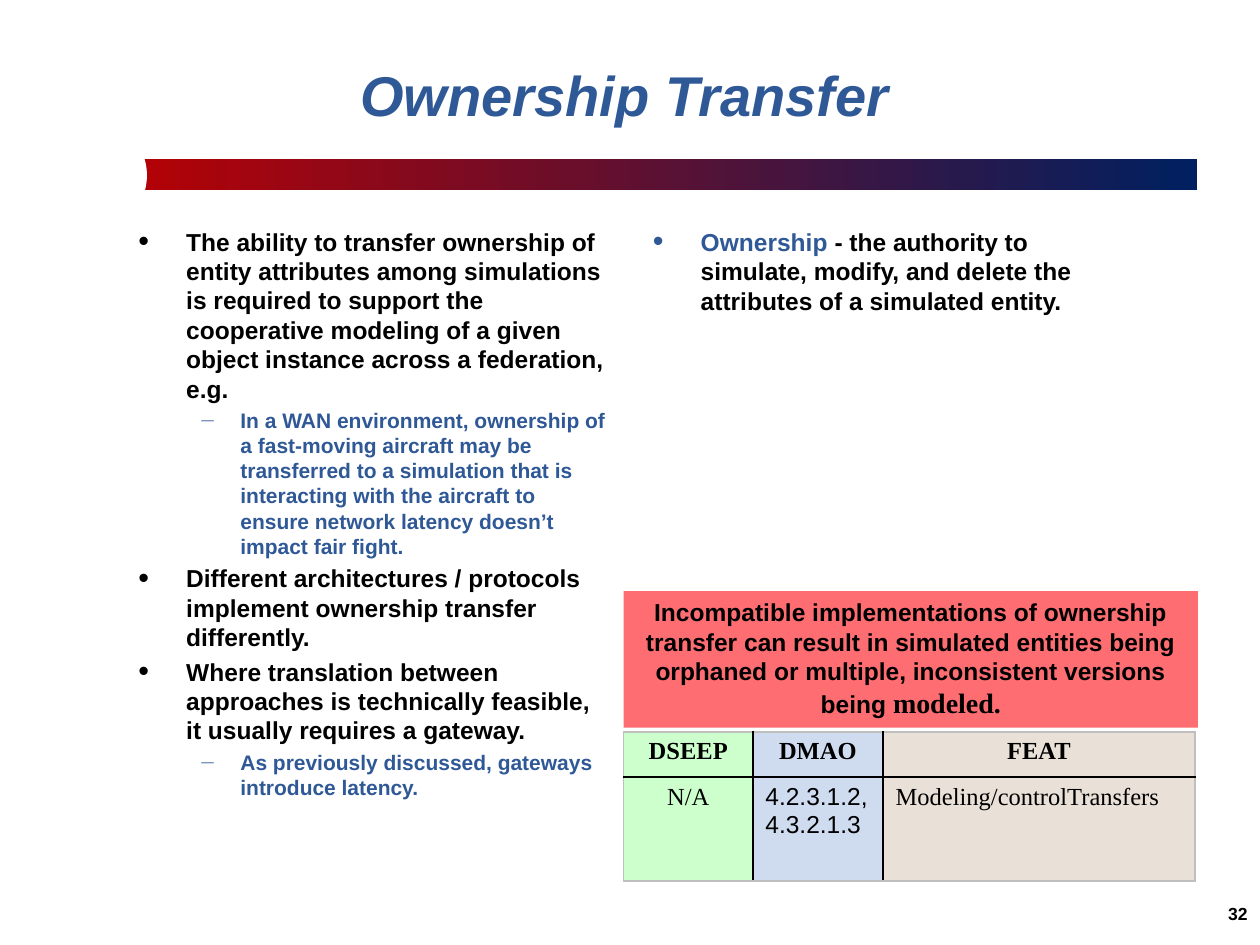
import pptx
import pptx.util
import pptx.dml.color
import pptx.enum.shapes
import pptx.enum.text
import pptx.oxml
import pptx.oxml.ns

COLORS = {"black": "000000", "blue": "2F5897", "white": "FFFFFF", "red": "C00000",
          "navy": "002060", "warning": "FD6D71", "green": "CCFFCC",
          "pale blue": "CFDCF0", "sand": "E9E0D7", "edge": "BFBFBF"}
RGB = {name: pptx.dml.color.RGBColor.from_string(code) for name, code in COLORS.items()}
ALIGN = pptx.enum.text.PP_ALIGN
ANCHOR = pptx.enum.text.MSO_ANCHOR
SHAPE = pptx.enum.shapes.MSO_SHAPE

deck = pptx.Presentation()
deck.slide_width = pptx.util.Inches(10)
deck.slide_height = pptx.util.Inches(7.5)
page = deck.slides.add_slide(deck.slide_layouts[5])


def place(column, row, columns, rows):
    """Turn places on a grid of 120 columns and 90 rows into lengths."""
    across, down = deck.slide_width / 120, deck.slide_height / 90
    return [pptx.util.Emu(round(cells * unit)) for cells, unit in
            ((column, across), (row, down), (columns, across), (rows, down))]


def style(font, size, color="black", name="Arial", bold=True):
    font.size, font.name, font.bold = pptx.util.Pt(size), name, bold
    font.color.rgb = RGB[color]


# Gradient bar, with its left end rounded out by a white disc
bar = page.shapes.add_shape(SHAPE.RECTANGLE, *place(6, 15.1, 108, 3))
bar.fill.gradient()
bar.fill.gradient_angle = 0
for stop, color in zip(bar.fill.gradient_stops, ("red", "navy")):
    stop.color.rgb = RGB[color]
disc = page.shapes.add_shape(SHAPE.OVAL, *place(3, 11.2, 11, 11))
disc.fill.solid()
disc.fill.fore_color.rgb = RGB["white"]
for shape in (bar, disc):
    shape.line.fill.background()
    shape.shadow.inherit = False

# Title
title = page.shapes.title
title.left, title.top, title.width, title.height = place(8, 3, 103, 12)
title.text_frame.text = "Ownership Transfer"
title.text_frame.vertical_anchor = ANCHOR.MIDDLE
para = title.text_frame.paragraphs[0]
para.alignment = ALIGN.CENTER
style(para.font, 32, "blue")
para.font.italic = True

# Bulleted columns: each paragraph is a level and its (text, color) spans
left_points = [
    (0, [("The ability to transfer ownership of entity attributes among simulations is "
          "required to support the cooperative modeling of a given object instance across "
          "a federation, e.g.", "black")]),
    (1, [("In a WAN environment, ownership of a fast-moving aircraft may be transferred to "
          "a simulation that is interacting with the aircraft to ensure network latency "
          "doesn’t impact fair fight.", "blue")]),
    (0, [("Different architectures / protocols implement ownership transfer differently.",
          "black")]),
    (0, [("Where translation between approaches is technically feasible, it usually "
          "requires a gateway.", "black")]),
    (1, [("As previously discussed, gateways introduce latency.", "blue")]),
]
right_points = [
    (0, [("Ownership ", "blue"),
         ("- the authority to simulate, modify, and delete the attributes of a simulated "
          "entity.", "black")]),
]
# Per level: text size, left margin, hanging indent, bullet, bullet size in percent
LEVELS = [(14, 0.38, 0.38, "•", 125), (12, 0.81, 0.31, "―", 60)]

for points, spot in ((left_points, place(12, 21, 47, 59)),
                     (right_points, place(61, 21, 47, 28.4))):
    frame = page.shapes.add_textbox(*spot).text_frame
    frame.word_wrap = True
    for index, (level, spans) in enumerate(points):
        size, margin, hanging, bullet, percent = LEVELS[level]
        para = frame.add_paragraph() if index else frame.paragraphs[0]
        para.level = level
        if index:
            para.space_before = pptx.util.Pt(size * 0.2)
        properties = para._p.get_or_add_pPr()
        properties.set("marL", str(pptx.util.Inches(margin)))
        properties.set("indent", str(-pptx.util.Inches(hanging)))
        for tag, key, value in (("buSzPct", "val", str(percent * 1000)),
                                ("buFont", "typeface", "Arial"),
                                ("buChar", "char", bullet)):
            properties.append(pptx.oxml.parse_xml(
                f'<a:{tag} {pptx.oxml.ns.nsdecls("a")} {key}="{value}"/>'))
        style(para.font, size, spans[0][1])
        for text, color in spans:
            span = para.add_run()
            span.text = text
            if len(spans) > 1:
                span.font.color.rgb = RGB[color]

# Slide number
number = page.shapes.add_textbox(*place(115, 85.4, 5, 4.6))
para = number.text_frame.paragraphs[0]
para.text = "32"
para.alignment = ALIGN.RIGHT
style(para.font, 10)

# Table of references
table_columns = [("green", 12.3, "DSEEP", "N/A", "Times New Roman", ALIGN.CENTER),
                 ("pale blue", 12.4, "DMAO", "4.2.3.1.2, 4.3.2.1.3", "Arial", ALIGN.LEFT),
                 ("sand", 29.7, "FEAT", "Modeling/controlTransfers", "Times New Roman",
                  ALIGN.LEFT)]
table = page.shapes.add_table(2, 3, *place(59.4, 69.7, 54.4, 14.2)).table
for row, height in zip(table.rows, (4.3, 9.9)):
    row.height = place(0, 0, 0, height)[3]
for column, (fill, width, head, value, body_font, body_align) in enumerate(table_columns):
    table.columns[column].width = place(0, 0, width, 0)[2]
    contents = ((head, "Times New Roman", ALIGN.CENTER, True),
                (value, body_font, body_align, False))
    for row, (text, name, align, bold) in enumerate(contents):
        cell = table.cell(row, column)
        # Inner rules are black, the outer frame is grey
        outer = {"lnL": column == 0, "lnR": column == 2, "lnT": row == 0, "lnB": row == 1}
        for side, is_outer in outer.items():
            color = COLORS["edge" if is_outer else "black"]
            cell._tc.get_or_add_tcPr().append(pptx.oxml.parse_xml(
                f'<a:{side} {pptx.oxml.ns.nsdecls("a")} w="{pptx.util.Pt(1)}"><a:solidFill>'
                f'<a:srgbClr val="{color}"/></a:solidFill></a:{side}>'))
        cell.fill.solid()
        cell.fill.fore_color.rgb = RGB[fill]
        para = cell.text_frame.paragraphs[0]
        para.text = text
        para.alignment = align
        style(para.font, 14, name=name, bold=bold)

# Warning box
warning = page.shapes.add_shape(SHAPE.RECTANGLE, *place(59.4, 56.3, 54.7, 13))
warning.shadow.inherit = False
warning.fill.solid()
warning.fill.fore_color.rgb = RGB["warning"]
warning.line.fill.background()
warning.text_frame.word_wrap = True
warning.text_frame.vertical_anchor = ANCHOR.TOP
para = warning.text_frame.paragraphs[0]
para.alignment = ALIGN.CENTER
for text, size, name in (
        ("Incompatible implementations of ownership transfer can result in simulated entities "
         "being orphaned or multiple, inconsistent versions being ", 14, "Arial"),
        ("modeled.", 16, "Times New Roman")):
    span = para.add_run()
    span.text = text
    style(span.font, size, name=name)

deck.save("out.pptx")
